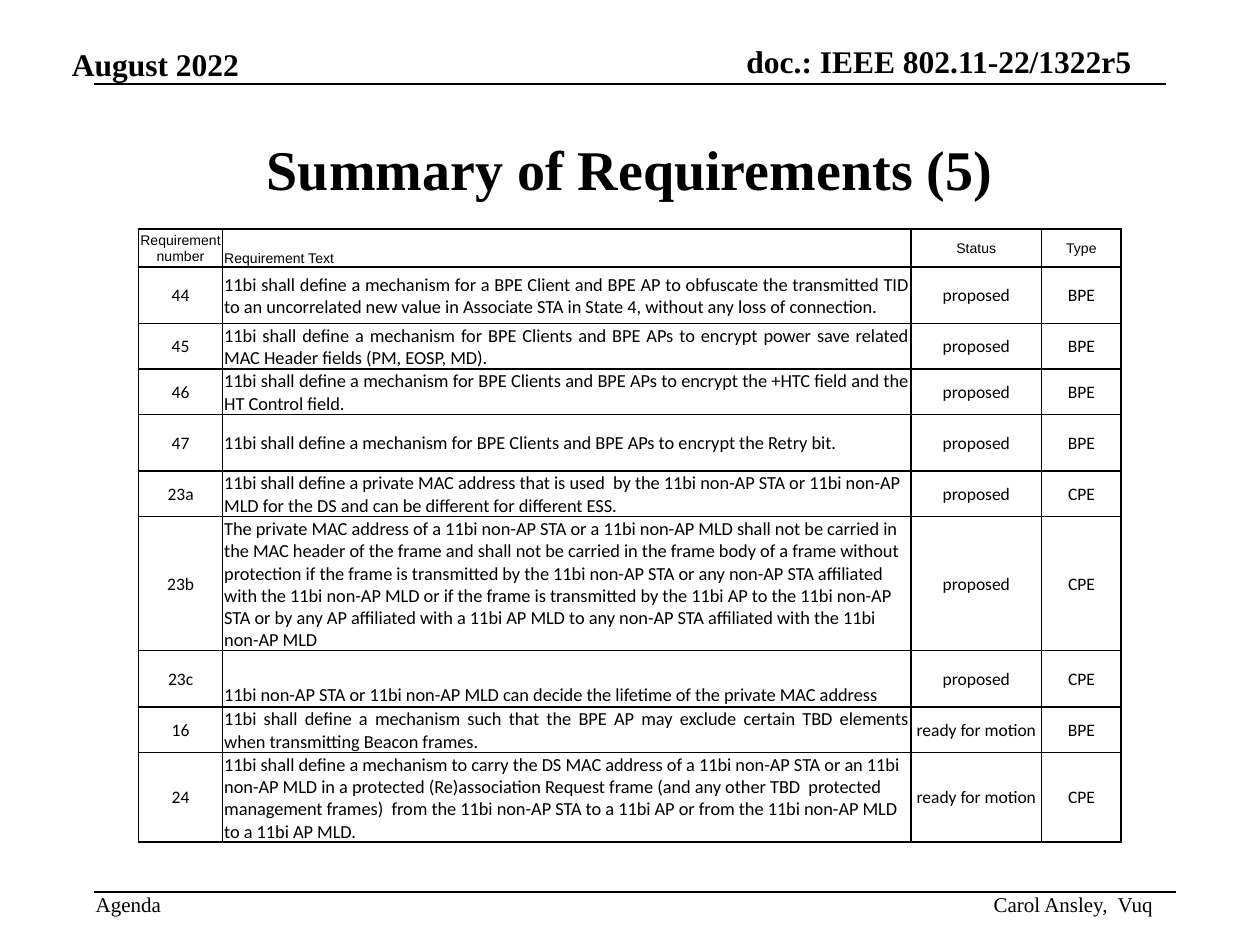
from lxml import etree
from pptx import Presentation, util as u
from pptx.dml.color import RGBColor
from pptx.enum import shapes, text
from pptx.oxml.ns import qn

LEFT, CENTER, RIGHT, JUSTIFY = (
    text.PP_ALIGN.LEFT, text.PP_ALIGN.CENTER, text.PP_ALIGN.RIGHT, text.PP_ALIGN.JUSTIFY)
TOP, MIDDLE, BOTTOM = (
    text.MSO_ANCHOR.TOP, text.MSO_ANCHOR.MIDDLE, text.MSO_ANCHOR.BOTTOM)

HEADINGS = ["Requirement number", "Requirement Text", "Status", "Type"]
COLUMN_WIDTHS = [1.7, 13.87, 2.64, 1.6]
HEADING_HEIGHT = 0.76
PROPOSED, READY = "proposed", "ready for motion"

# Number, wording, status, type, text alignment, text anchor, row height in cm
REQUIREMENTS = [
    ("44", "11bi shall define a mechanism for a BPE Client and BPE AP to obfuscate the "
     "transmitted TID to an uncorrelated new value in Associate STA in State 4, without "
     "any loss of connection.", PROPOSED, "BPE", JUSTIFY, MIDDLE, 1.14),
    ("45", "11bi shall define a mechanism for BPE Clients and BPE APs to encrypt power save "
     "related MAC Header fields (PM, EOSP, MD).", PROPOSED, "BPE", JUSTIFY, MIDDLE, 0.76),
    ("46", "11bi shall define a mechanism for BPE Clients and BPE APs to encrypt the +HTC "
     "field and the HT Control field.", PROPOSED, "BPE", JUSTIFY, MIDDLE, 0.76),
    ("47", "11bi shall define a mechanism for BPE Clients and BPE APs to encrypt the Retry "
     "bit.", PROPOSED, "BPE", JUSTIFY, MIDDLE, 1.14),
    ("23a", "11bi shall define a private MAC address that is used  by the 11bi non-AP STA or "
     "11bi non-AP MLD for the DS and can be different for different ESS.",
     PROPOSED, "CPE", LEFT, BOTTOM, 0.76),
    ("23b", "The private MAC address of a 11bi non-AP STA or a 11bi non-AP MLD shall not be "
     "carried in the MAC header of the frame and shall not be carried in the frame body of a "
     "frame without protection if the frame is transmitted by the 11bi non-AP STA or any "
     "non-AP STA affiliated with the 11bi non-AP MLD or if the frame is transmitted by the "
     "11bi AP to the 11bi non-AP STA or by any AP affiliated with a 11bi AP MLD to any non-AP "
     "STA affiliated with the 11bi non-AP MLD", PROPOSED, "CPE", LEFT, BOTTOM, 1.14),
    ("23c", "11bi non-AP STA or 11bi non-AP MLD can decide the lifetime of the private MAC "
     "address", PROPOSED, "CPE", LEFT, BOTTOM, 1.14),
    ("16", "11bi shall define a mechanism such that the BPE AP may exclude certain TBD "
     "elements when transmitting Beacon frames.", READY, "BPE", JUSTIFY, MIDDLE, 0.76),
    ("24", "11bi shall define a mechanism to carry the DS MAC address of a 11bi non-AP STA or "
     "an 11bi non-AP MLD in a protected (Re)association Request frame (and any other TBD  "
     "protected management frames)  from the 11bi non-AP STA to a 11bi AP or from the 11bi "
     "non-AP MLD to a 11bi AP MLD.", READY, "CPE", LEFT, BOTTOM, 1.5),
]


def colour(value):
    return RGBColor.from_string(value)


def write(frame, words, font="Times New Roman", size=12, bold=False, align=LEFT,
          ink="000000"):
    para = frame.paragraphs[0]
    para.alignment = align
    span = para.add_run()
    span.text = words
    span.font.name = font
    span.font.size = u.Pt(size)
    span.font.bold = bold
    span.font.color.rgb = colour(ink)


class Page:
    ink = "000000"
    line_width = u.Pt(1)
    cell_margin = u.Cm(0.03)

    def __init__(self, deck):
        self.slide = deck.slides.add_slide(deck.slide_layouts[6])

    def label(self, words, left, top, width, height, anchor=TOP, wrap=False, **style):
        box = self.slide.shapes.add_textbox(
            u.Cm(left), u.Cm(top), u.Cm(width), u.Cm(height))
        frame = box.text_frame
        frame.margin_left = frame.margin_right = frame.margin_top = frame.margin_bottom = 0
        frame.vertical_anchor = anchor
        frame.word_wrap = wrap
        write(frame, words, ink=self.ink, **style)

    def rule(self, left, right, top):
        line = self.slide.shapes.add_connector(
            shapes.MSO_CONNECTOR.STRAIGHT, u.Cm(left), u.Cm(top), u.Cm(right), u.Cm(top))
        line.line.color.rgb = colour(self.ink)
        line.line.width = self.line_width
        etree.SubElement(line._element.spPr, qn("a:effectLst"))

    def cell(self, cell, words, anchor=MIDDLE, **style):
        cell.margin_left = cell.margin_right = cell.margin_top = self.cell_margin
        cell.margin_bottom = 0
        cell.vertical_anchor = anchor
        properties = cell._tc.get_or_add_tcPr()
        for side in ("a:lnL", "a:lnR", "a:lnT", "a:lnB"):
            border = etree.SubElement(properties, qn(side), w=str(self.line_width))
            fill = etree.SubElement(border, qn("a:solidFill"))
            etree.SubElement(fill, qn("a:srgbClr"), val=self.ink)
        cell.fill.background()
        write(cell.text_frame, words, ink=self.ink, **style)

    def requirement_table(self, left, top, height):
        holder = self.slide.shapes.add_table(
            len(REQUIREMENTS) + 1, len(HEADINGS), u.Cm(left), u.Cm(top),
            u.Cm(sum(COLUMN_WIDTHS)), u.Cm(height))
        table = holder.table
        table.first_row = table.horz_banding = False
        for column, width in zip(table.columns, COLUMN_WIDTHS):
            column.width = u.Cm(width)
        heights = [HEADING_HEIGHT] + [entry[-1] for entry in REQUIREMENTS]
        for row, row_height in zip(table.rows, heights):
            row.height = u.Cm(row_height)
        holder.height = u.Cm(height)

        # Heading row
        for index, heading in enumerate(HEADINGS):
            is_wording = index == 1
            self.cell(table.cell(0, index), heading, font="Arial", size=8,
                      align=LEFT if is_wording else CENTER,
                      anchor=BOTTOM if is_wording else MIDDLE)

        # Requirement rows
        for index, entry in enumerate(REQUIREMENTS, start=1):
            number, wording, status, kind, align, anchor, _ = entry
            for column, words in ((0, number), (2, status), (3, kind)):
                self.cell(table.cell(index, column), words, font="Calibri", size=10,
                          align=CENTER)
            self.cell(table.cell(index, 1), wording, font="Calibri", size=10.5,
                      align=align, anchor=anchor)


def main():
    deck = Presentation()
    deck.slide_width, deck.slide_height = u.Cm(25.4), u.Cm(19.05)
    page = Page(deck)

    # Header
    page.label("August 2022", 1.45, 0.91, 3.4, 0.76, anchor=BOTTOM, size=18, bold=True)
    page.label("doc.: IEEE 802.11-22/1322r5", 14.94, 0.84, 7.87, 0.76, anchor=BOTTOM,
               size=18, bold=True, align=RIGHT)
    page.rule(1.9, 23.5, 1.7)

    # Footer
    page.rule(1.9, 23.7, 17.98)
    page.label("Agenda", 1.93, 17.98, 1.35, 0.51)
    page.label("Carol Ansley,  Vuq", 19.94, 17.98, 3.3, 0.51, anchor=BOTTOM, align=RIGHT)

    # Title and table
    page.label("Summary of Requirements (5)", 1.9, 1.9, 21.6, 2.97, anchor=MIDDLE,
               wrap=True, size=32, bold=True, align=CENTER)
    page.requirement_table(2.79, 4.62, 12.34)

    deck.save("out.pptx")


if __name__ == "__main__":
    main()
